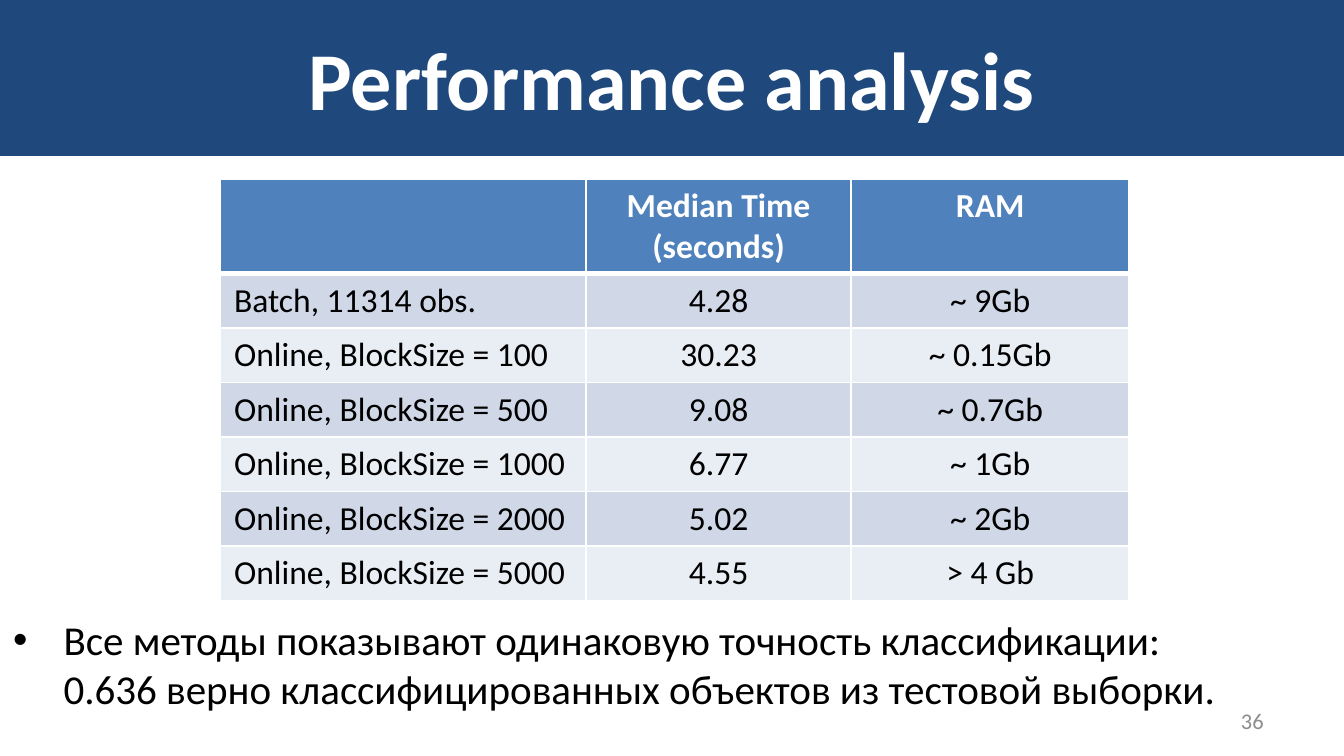
from lxml import etree
from pptx import Presentation
from pptx.dml.color import RGBColor
from pptx.enum.shapes import MSO_SHAPE
from pptx.enum.text import MSO_ANCHOR, PP_ALIGN
from pptx.oxml.ns import qn
from pptx.util import Pt

RECT = MSO_SHAPE.RECTANGLE
TOP, MID = MSO_ANCHOR.TOP, MSO_ANCHOR.MIDDLE
LEFT, MIDDLE, RIGHT = PP_ALIGN.LEFT, PP_ALIGN.CENTER, PP_ALIGN.RIGHT
WHITE, BLACK, GREY = "FFFFFF", "000000", "8C8C8C"
NAVY, BLUE, BANDS = "1F497D", "4F81BD", ("D0D8E8", "E9EDF4")

ROWS = [
    ("", "Median Time (seconds)", "RAM"),
    ("Batch, 11314 obs.", "4.28", "~ 9Gb"),
    ("Online, BlockSize = 100", "30.23", "~ 0.15Gb"),
    ("Online, BlockSize = 500", "9.08", "~ 0.7Gb"),
    ("Online, BlockSize = 1000", "6.77", "~ 1Gb"),
    ("Online, BlockSize = 2000", "5.02", "~ 2Gb"),
    ("Online, BlockSize = 5000", "4.55", "> 4 Gb"),
]
NOTES = [
    "Все методы показывают одинаковую точность классификации:",
    "0.636 верно классифицированных объектов из тестовой выборки.",
]


def paint(fill, color):
    fill.solid()
    fill.fore_color.rgb = RGBColor.from_string(color)


class Deck:
    """Holds the text style and the current slide."""

    def __init__(self, slide, font):
        self.slide = slide
        self.font = font

    def text(self, frame, lines, size, color, align=LEFT, anchor=TOP, bold=False):
        frame.word_wrap = True
        frame.vertical_anchor = anchor
        para = frame.paragraphs[0]
        para.alignment = align
        for i, line in enumerate(lines):
            if i:
                para.add_line_break()
            run = para.add_run()
            run.text = line
            run.font.name = self.font
            run.font.size = Pt(size)
            run.font.bold = bold
            paint(run.font.fill, color)
        return para

    def banner(self, box, title):
        shape = self.slide.shapes.add_shape(RECT, *map(Pt, box))
        shape.shadow.inherit = False
        paint(shape.fill, NAVY)
        shape.line.fill.background()
        self.text(shape.text_frame, [title], 44, WHITE, MIDDLE, MID, True)

    def label(self, box, lines, size, color, align=LEFT, anchor=TOP):
        shape = self.slide.shapes.add_textbox(*map(Pt, box))
        return self.text(shape.text_frame, lines, size, color, align, anchor)

    def bullet(self, box, lines, size, indent):
        props = self.label(box, lines, size, BLACK)._p.get_or_add_pPr()
        props.set("marL", str(Pt(indent)))
        props.set("indent", str(-Pt(indent)))
        etree.SubElement(props, qn("a:buFont"), typeface="Arial")
        etree.SubElement(props, qn("a:buChar"), char="•")

    def border(self, cell, widths):
        props = cell._tc.get_or_add_tcPr()
        for i, (side, width) in enumerate(zip("LRTB", widths)):
            line = etree.Element(qn(f"a:ln{side}"), w=str(Pt(width)))
            fill = etree.SubElement(line, qn("a:solidFill"))
            etree.SubElement(fill, qn("a:srgbClr"), val=WHITE)
            props.insert(i, line)

    def table(self, left, top, cols, heights, rows):
        box = map(Pt, (left, top, sum(cols), sum(heights)))
        grid = self.slide.shapes.add_table(len(rows), len(cols), *box).table
        for col, width in zip(grid.columns, cols):
            col.width = Pt(width)
        for r, row in enumerate(rows):
            grid.rows[r].height = Pt(heights[r])
            head = r == 0
            for c, value in enumerate(row):
                cell = grid.cell(r, c)
                paint(cell.fill, BLUE if head else BANDS[(r - 1) % 2])
                self.border(cell, (1, 1, 3 if r == 1 else 1, 3 if head else 1))
                self.text(cell.text_frame, [value] if value else [], 18,
                          WHITE if head else BLACK, MIDDLE if head or c else LEFT, bold=head)


def main():
    show = Presentation()
    show.slide_width, show.slide_height = Pt(720), Pt(405)
    deck = Deck(show.slides.add_slide(show.slide_layouts[6]), "Calibri")
    deck.bullet((0, 325.5, 720, 79.5), NOTES, 22, 27)
    deck.banner((0, 0, 720, 83.5), "Performance analysis")
    deck.label((516, 375, 168, 21.5), ["36"], 12, GREY, RIGHT, MID)
    deck.table(118.2, 96, (195.8, 142, 149), [50.4] + [29.2] * 6, ROWS)
    show.save("out.pptx")


if __name__ == "__main__":
    main()
